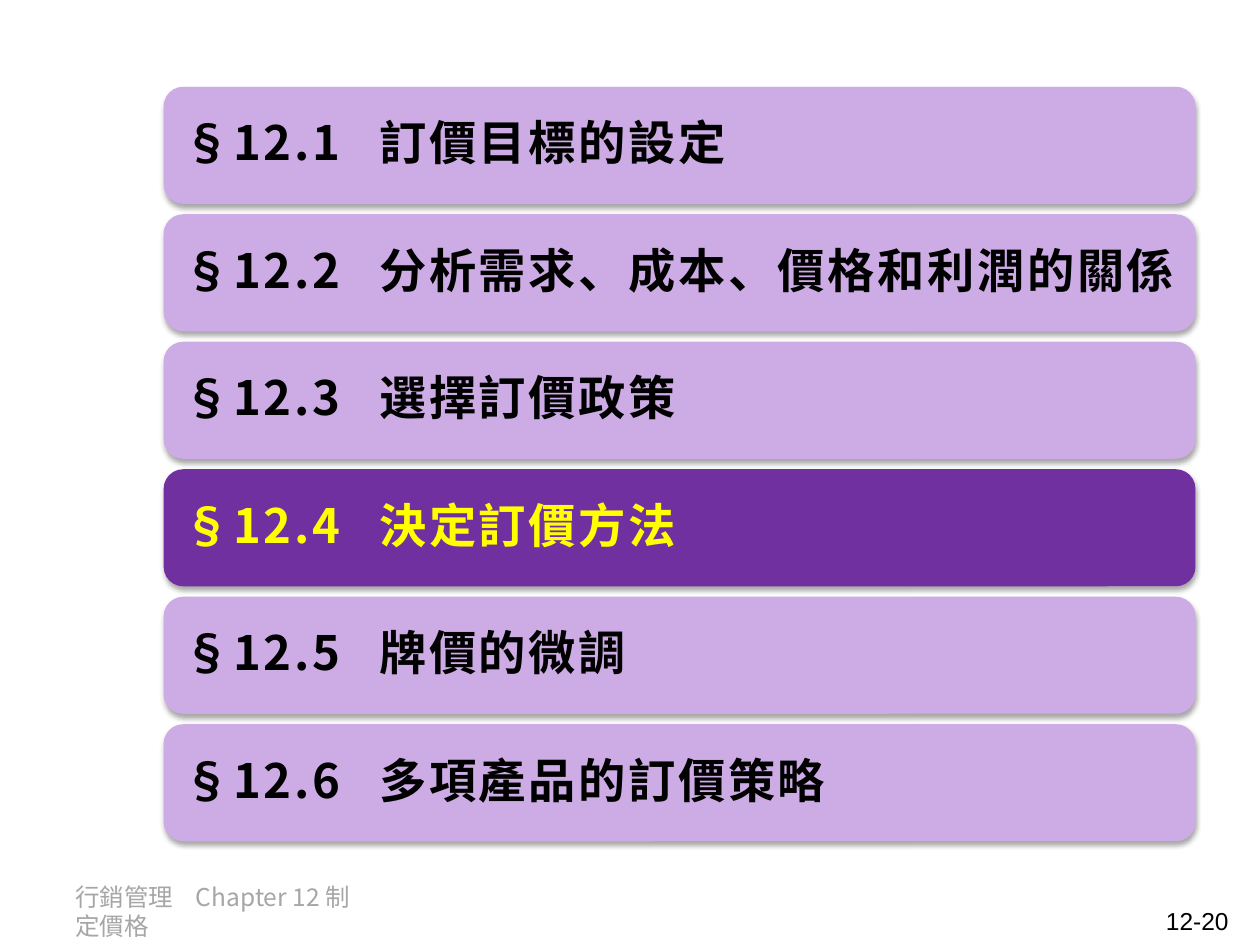
from dataclasses import dataclass

from lxml.etree import SubElement
from pptx import Presentation
from pptx.dml.color import RGBColor
from pptx.enum.shapes import MSO_SHAPE
from pptx.enum.text import MSO_ANCHOR, PP_ALIGN
from pptx.oxml.ns import qn
from pptx.util import Cm, Pt

LILAC = RGBColor(0xCD, 0xAC, 0xE6)
PURPLE = RGBColor(0x70, 0x30, 0xA0)
YELLOW = RGBColor(0xFF, 0xFF, 0x00)
BLACK = RGBColor(0x00, 0x00, 0x00)
GREY = RGBColor(0xA6, 0xA6, 0xA6)

LATIN = "Arial"
CJK = "Noto Sans CJK SC"

BAR_LEFT, BAR_TOP = 3.3, 1.75
BAR_WIDTH, BAR_HEIGHT = 20.8, 2.36
BAR_PITCH = 2.57
BAR_INSET = Cm(0.28)


@dataclass(frozen=True)
class Section:
    number: str
    title: str
    current: bool = False


SECTIONS = [
    Section("§12.1", "訂價目標的設定"),
    Section("§12.2", "分析需求、成本、價格和利潤的關係"),
    Section("§12.3", "選擇訂價政策"),
    Section("§12.4", "決定訂價方法", current=True),
    Section("§12.5", "牌價的微調"),
    Section("§12.6", "多項產品的訂價策略"),
]


def add_tab_stop(paragraph, position: int) -> None:
    stops = SubElement(paragraph._p.get_or_add_pPr(), qn("a:tabLst"))
    SubElement(stops, qn("a:tab"), pos=str(position), algn="l")


def add_run(paragraph, text: str, size: float, color: RGBColor,
            latin: str = CJK, bold: bool = False, spacing: float = 0) -> None:
    run = paragraph.add_run()
    run.text = text
    run.font.size = Pt(size)
    run.font.bold = bold
    run.font.color.rgb = color
    run.font.name = latin
    properties = run.font._element
    SubElement(properties, qn("a:ea"), typeface=CJK)
    if spacing:
        properties.set("spc", str(round(spacing * 100)))


def add_soft_shadow(shape) -> None:
    shape.shadow.inherit = False
    effects = shape._element.spPr.find(qn("a:effectLst"))
    shadow = SubElement(effects, qn("a:outerShdw"), blurRad=str(Pt(3.1)),
                        dist=str(Pt(1.8)), dir="5400000", rotWithShape="0")
    color = SubElement(shadow, qn("a:srgbClr"), val=str(BLACK))
    SubElement(color, qn("a:alpha"), val="35000")


def add_section_bar(slide, section: Section, top: float) -> None:
    bar = slide.shapes.add_shape(MSO_SHAPE.ROUNDED_RECTANGLE, Cm(BAR_LEFT), Cm(top),
                                 Cm(BAR_WIDTH), Cm(BAR_HEIGHT))
    bar.fill.solid()
    bar.fill.fore_color.rgb = PURPLE if section.current else LILAC
    bar.line.fill.background()
    add_soft_shadow(bar)

    frame = bar.text_frame
    frame.word_wrap = True
    frame.vertical_anchor = MSO_ANCHOR.MIDDLE
    frame.margin_left = frame.margin_right = BAR_INSET
    frame.margin_top = frame.margin_bottom = BAR_INSET
    heading = frame.paragraphs[0]
    heading.alignment = PP_ALIGN.LEFT
    heading.line_spacing = 0.9
    after = SubElement(heading._p.get_or_add_pPr(), qn("a:spcAft"))
    SubElement(after, qn("a:spcPct"), val="35000")
    add_tab_stop(heading, Cm(3.95))

    color = YELLOW if section.current else BLACK
    add_run(heading, section.number + "\t", 27, color, bold=True, spacing=1.5)
    add_run(heading, section.title, 27, color, LATIN, bold=True, spacing=1.5)


def add_footer_paragraph(slide, left: float, top: float, width: float, height: float):
    box = slide.shapes.add_textbox(Cm(left), Cm(top), Cm(width), Cm(height))
    box.text_frame.word_wrap = True
    return box.text_frame.paragraphs[0]


def main() -> None:
    presentation = Presentation()
    presentation.slide_width, presentation.slide_height = Cm(25.4), Cm(19.05)
    slide = presentation.slides.add_slide(presentation.slide_layouts[6])

    # Footer: book and chapter, page number
    chapter = add_footer_paragraph(slide, 1.27, 17.65, 6.22, 1.02)
    add_tab_stop(chapter, Cm(2.43))
    add_run(chapter, "行銷管理\tChapter 12 制定價格", 14, GREY)

    page = add_footer_paragraph(slide, 19.1, 18.13, 5.92, 0.74)
    page.alignment = PP_ALIGN.RIGHT
    add_run(page, "12-20", 14, BLACK, LATIN)

    # Chapter outline with the current section highlighted
    for index, section in enumerate(SECTIONS):
        add_section_bar(slide, section, BAR_TOP + index * BAR_PITCH)

    presentation.save("out.pptx")


if __name__ == "__main__":
    main()
